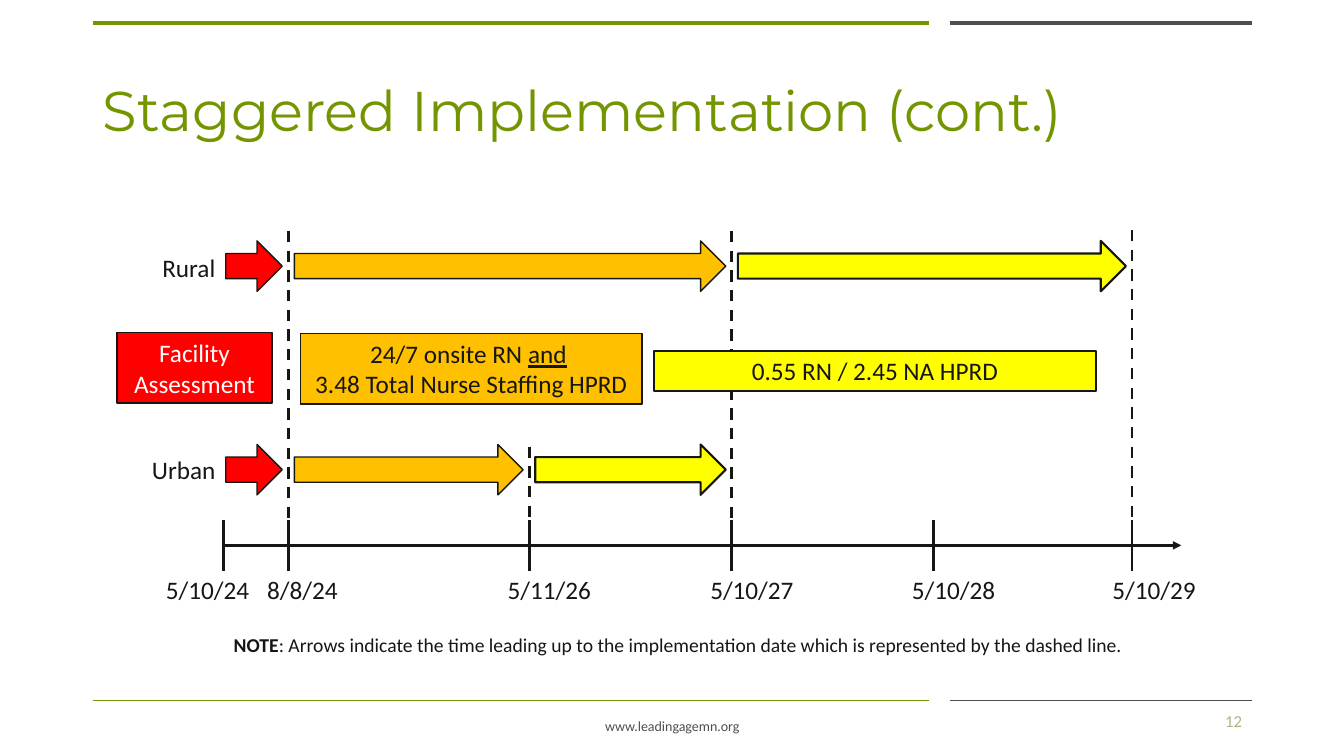
from lxml import etree
from pptx import Presentation
from pptx import util as u
from pptx.dml.color import RGBColor
from pptx.enum import dml, shapes, text
from pptx.oxml.ns import qn

# Grid of tenth-inch cells: columns across, rows down
CELL = u.Inches(0.1)
COLUMNS, ROWS = 133.33, 75

COLORS = {
    "green": "739600", "grey": "4D4F53", "sage": "A6B88C", "ink": "161614",
    "red": "FF0000", "orange": "FFC000", "yellow": "FFFF00", "white": "FFFFFF",
}

# Date: (column of its tick, shift of its label)
DATES = {
    "5/10/24": (22.2, -1.6), "8/8/24": (28.6, 1.4), "5/11/26": (52.5, 2),
    "5/10/27": (72.6, 2), "5/10/28": (92.6, 2), "5/10/29": (112.3, 2.2),
}

# Phase colour: (outline width, gap between the start date and the arrow)
PHASES = {"red": (1, 0.2), "orange": (1, 0.6), "yellow": (1.5, 0.6)}
END_GAP = 0.6

# Lane: (arrow row, label row, label width, dates bounding the phases)
LANES = {
    "Rural": (23.9, 24.5, 7.3, ("5/10/24", "8/8/24", "5/10/27", "5/10/29")),
    "Urban": (44.1, 44.6, 8.7, ("5/10/24", "8/8/24", "5/11/26", "5/10/27")),
}

# Implementation date: (top row, bottom row) of its dashed line
DEADLINES = {
    "5/10/29": (22.8, 52.8), "5/10/27": (22.9, 52.9),
    "8/8/24": (22.9, 52.9), "5/11/26": (44.3, 54.8),
}

# Phase box: (colour, text colour, place, runs)
REQUIREMENTS = [
    ("red", "white", (11.6, 33, 15.4, 7), [("Facility Assessment", {})]),
    ("orange", "ink", (29.8, 33.1, 33.9, 7), [
        ("24/7 onsite RN ", {}), ("and", {"underline": True}), (" ", {}),
        ("\n", {}), ("3.48 Total Nurse Staffing HPRD", {})]),
    ("yellow", "ink", (64.9, 34.8, 43.8, 4), [("0.55 RN / 2.45 NA HPRD", {})]),
]

AXIS_ROW, TICK_HALF = 54.1, 2.5


def grid(*lengths):
    return [round(length * CELL) for length in lengths]


def rgb(color):
    return RGBColor.from_string(COLORS[color])


def write(frame, runs, color="ink", size=18, face="Calibri",
          align="LEFT", anchor="TOP", spacing=None):
    frame.word_wrap = True
    frame.vertical_anchor = text.MSO_ANCHOR[anchor]
    paragraph = frame.paragraphs[0]
    paragraph.alignment = text.PP_ALIGN[align]
    paragraph.line_spacing = spacing
    for words, emphasis in runs:
        if words == "\n":
            paragraph.add_line_break()
            continue
        run = paragraph.add_run()
        run.text = words
        run.font.color.rgb = rgb(color)
        settings = {"name": face, "size": u.Pt(size), **emphasis}
        for attribute, value in settings.items():
            setattr(run.font, attribute, value)


def add_label(slide, place, words, **style):
    runs = [(words, {})] if isinstance(words, str) else words
    write(slide.shapes.add_textbox(*grid(*place)).text_frame, runs, **style)


def add_rule(slide, start, end, color="ink", width=2, dashed=False, arrow=False):
    rule = slide.shapes.add_connector(
        shapes.MSO_CONNECTOR.STRAIGHT, *grid(*start, *end))
    rule.line.color.rgb = rgb(color)
    rule.line.width = u.Pt(width)
    if dashed:
        rule.line.dash_style = dml.MSO_LINE.DASH
    if arrow:
        etree.SubElement(rule.line._get_or_add_ln(), qn("a:tailEnd"), type="triangle")
    etree.SubElement(rule._element.spPr, qn("a:effectLst"))


def add_block(slide, kind, place, color):
    block = slide.shapes.add_shape(shapes.MSO_SHAPE[kind], *grid(*place))
    block.shadow.inherit = False
    block.fill.solid()
    block.fill.fore_color.rgb = rgb(color)
    block.line.color.rgb = rgb("ink")
    block.line.width = u.Pt(PHASES[color][0])
    return block


def add_frame(slide):
    for row, width in ((2.3, 3), (69.5, 1)):
        for left, right, color in ((9.2, 92.2, "green"), (94.2, 124.2, "grey")):
            add_rule(slide, (left, row), (right, row), color, width)
    add_label(slide, (44.2, 70.7, 45, 2.8), "www.leadingagemn.org",
              color="grey", size=10, align="CENTER")
    add_label(slide, (9.2, 4, 115, 14.5), "Staggered Implementation (cont.)",
              color="green", size=40, face="Montserrat", anchor="MIDDLE", spacing=0.9)
    add_label(slide, (94.2, 69.5, 30, 4), "12",
              color="sage", size=12, align="RIGHT", anchor="MIDDLE")


def add_timeline(slide):
    add_rule(slide, (DATES["5/10/24"][0], AXIS_ROW), (117.2, AXIS_ROW), arrow=True)
    label_width = 12
    for date, (column, shift) in DATES.items():
        add_rule(slide, (column, AXIS_ROW - TICK_HALF), (column, AXIS_ROW + TICK_HALF))
        add_label(slide, (column + shift - label_width / 2, 56.5, label_width, 4),
                  date, align="CENTER")


def add_lane(slide, name, arrow_row, label_row, label_width, dates):
    add_label(slide, (22.35 - label_width, label_row, label_width, 4),
              name, align="RIGHT")
    for color, start, end in zip(PHASES, dates, dates[1:]):
        left = DATES[start][0] + PHASES[color][1]
        right = DATES[end][0] - END_GAP
        add_block(slide, "RIGHT_ARROW", (left, arrow_row, right - left, 5), color)


def main():
    deck = Presentation()
    deck.slide_width, deck.slide_height = grid(COLUMNS, ROWS)
    slide = deck.slides.add_slide(deck.slide_layouts[6])

    add_frame(slide)
    add_timeline(slide)
    for name, lane in LANES.items():
        add_lane(slide, name, *lane)

    # Dashed lines stand behind the requirement boxes
    for date, (top, bottom) in DEADLINES.items():
        column = DATES[date][0]
        add_rule(slide, (column, top), (column, bottom), dashed=True)
    for color, ink, place, runs in REQUIREMENTS:
        box = add_block(slide, "RECTANGLE", place, color)
        write(box.text_frame, runs, color=ink, align="CENTER")

    add_label(slide, (22.2, 62.3, 96.1, 3.4), [
        ("NOTE", {"bold": True}),
        (": Arrows indicate the time leading up to the implementation date "
         "which is represented by the dashed line.", {})], size=14)
    deck.save("out.pptx")


if __name__ == "__main__":
    main()
